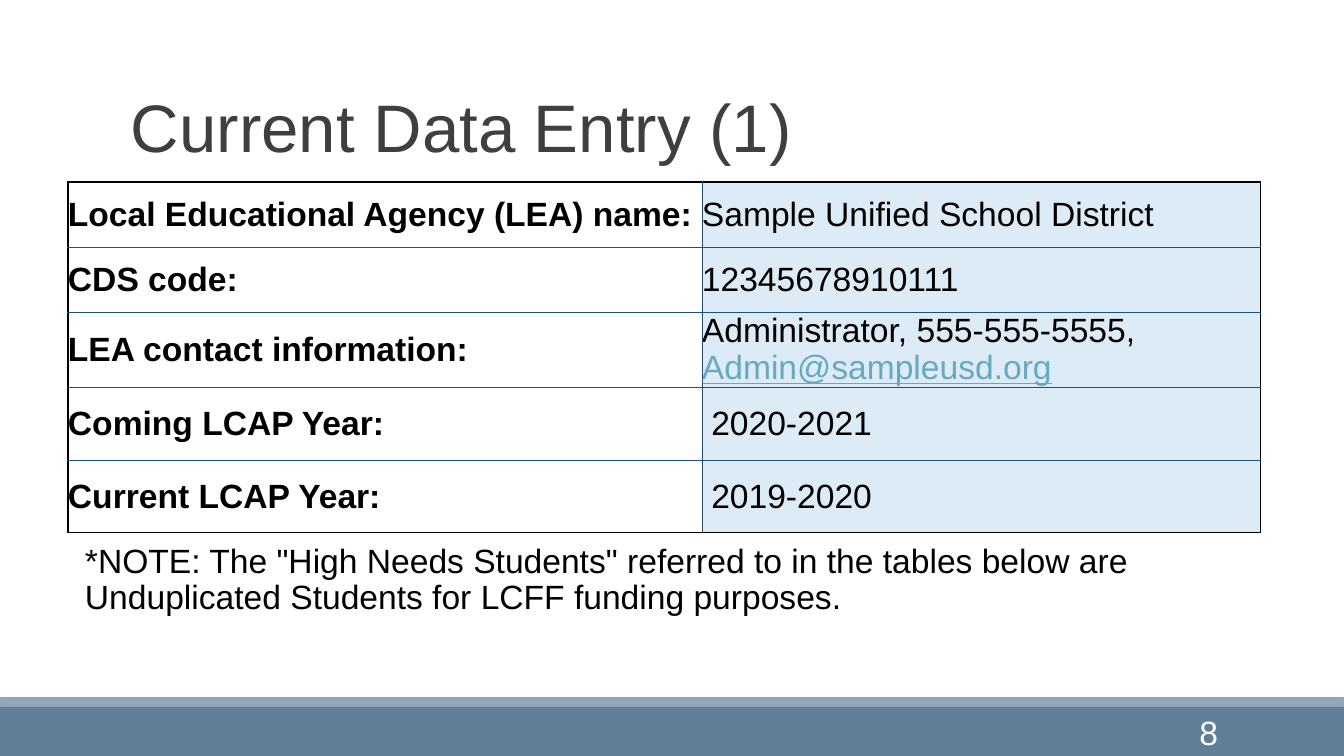
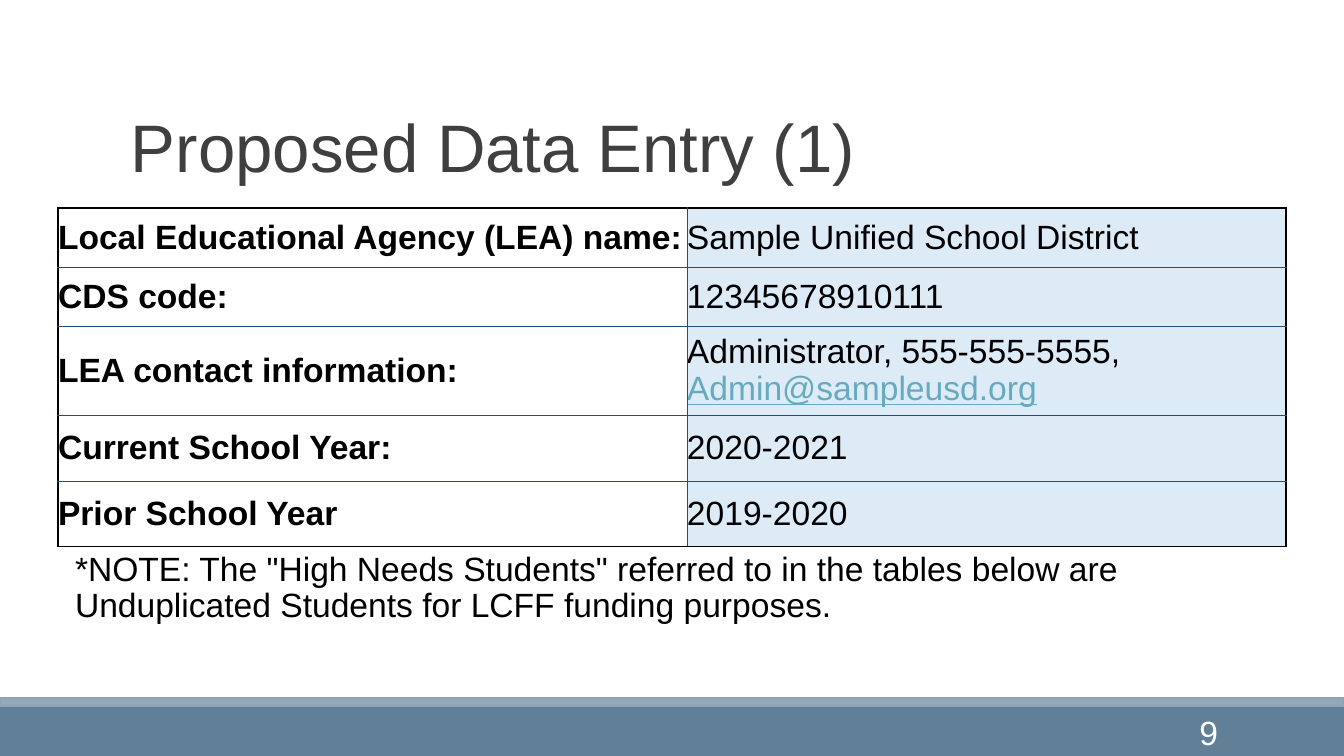
from lxml.etree import SubElement
from pptx import Presentation
from pptx.dml.color import RGBColor
from pptx.enum.shapes import MSO_SHAPE as Preset
from pptx.enum.text import MSO_ANCHOR as Anchor, MSO_AUTO_SIZE as AutoSize, PP_ALIGN as Align
from pptx.oxml.ns import qn
from pptx.util import Emu, Pt

SLIDE_WIDTH, SLIDE_HEIGHT = 1344, 756
FONT = "Arial"
BLACK, WHITE = "000000", "FFFFFF"
TITLE_GREY = "3F3F3F"
BAND, BAND_EDGE, BAND_LINE = "618097", "92A9B9", "8FA2B6"
ENTRY_FILL, GRID, LINK = "DDEBF7", "1F4E78", "67AABF"
TITLE_LEFT, TITLE_TOP, TITLE_WIDTH = 121, 31, 1109
NOTE_BOTTOM = 683
NOTE = ('*NOTE: The "High Needs Students" referred to in the tables below are '
        "Unduplicated Students for LCFF funding purposes.")
SHARED_ROWS = [
    ("Local Educational Agency (LEA) name:", ["Sample Unified School District"]),
    ("CDS code:", ["12345678910111"]),
    ("LEA contact information:", ["Administrator, 555-555-5555, ", "Admin@sampleusd.org"]),
]
ENTRY_SLIDES = [
    dict(title="Current Data Entry (1)", number="8", title_height=140,
         left=68, top=182, columns=[634, 559], heights=[65, 65, 75, 73, 73], note_top=539,
         years=[("Coming LCAP Year:", [" 2020-2021"]),
                ("Current LCAP Year:", [" 2019-2020"])]),
    dict(title="Proposed Data Entry (1)", number="9", title_height=160,
         left=58, top=208, columns=[629, 599], heights=[59, 59, 89, 66, 66], note_top=547,
         years=[("Current School Year:", ["2020-2021"]),
                ("Prior School Year", ["2019-2020"])]),
]


def px(length):
    return Emu(round(length * 914400 / 100.8))


def color(value):
    return RGBColor.from_string(value)


def place(shape, left, top, width, height):
    shape.left, shape.top = px(left), px(top)
    shape.width, shape.height = px(width), px(height)


def set_frame(frame, anchor, horizontal, vertical):
    frame.word_wrap = True
    frame.auto_size = AutoSize.NONE
    frame.vertical_anchor = anchor
    frame.margin_left = frame.margin_right = px(horizontal)
    frame.margin_top = frame.margin_bottom = px(vertical)


def add_run(paragraph, text, size=24, ink=BLACK, bold=False, underline=False):
    run = paragraph.add_run()
    run.text = text
    font = run.font
    font.name, font.size = FONT, Pt(size)
    font.bold, font.underline = bold, underline
    font.color.rgb = color(ink)


def add_bands(slide, layout):
    bands = [(707, 50, BAND, None), (698, 8, BAND_EDGE, BAND_LINE)]
    for position, (top, height, fill, line) in enumerate(bands, start=2):
        band = slide.shapes.add_shape(Preset.RECTANGLE, 0, px(top), px(SLIDE_WIDTH), px(height))
        band.shadow.inherit = False
        band.fill.solid()
        band.fill.fore_color.rgb = color(fill)
        if line:
            band.line.color.rgb = color(line)
            band.line.width = Pt(1.25)
        else:
            band.line.fill.background()
        layout.element.cSld.spTree.insert(position, band.element)


def add_title(slide, text, height):
    title = slide.shapes.title
    place(title, TITLE_LEFT, TITLE_TOP, TITLE_WIDTH, height)
    set_frame(title.text_frame, Anchor.BOTTOM, 10, 5)
    paragraph = title.text_frame.paragraphs[0]
    paragraph.alignment = Align.LEFT
    paragraph.line_spacing = 0.85
    add_run(paragraph, text, 48, TITLE_GREY)


def add_note(slide, left, top, width):
    note = slide.placeholders[1]
    place(note, left, top, width, NOTE_BOTTOM - top)
    set_frame(note.text_frame, Anchor.TOP, 5, 5)
    paragraph = note.text_frame.paragraphs[0]
    properties = paragraph._p.get_or_add_pPr()
    properties.set("marL", str(px(12)))
    properties.set("indent", "0")
    SubElement(properties, qn("a:buNone"))
    paragraph.line_spacing = 0.9
    paragraph.space_before = Pt(0)
    add_run(paragraph, NOTE)


def add_number(slide, text):
    box = slide.shapes.add_textbox(px(1084), px(712), px(144), px(40))
    set_frame(box.text_frame, Anchor.MIDDLE, 10, 5)
    paragraph = box.text_frame.paragraphs[0]
    paragraph.alignment = Align.RIGHT
    add_run(paragraph, text, ink=WHITE)


def add_borders(cell, outer_sides):
    properties = cell._tc.get_or_add_tcPr()
    for side in "LRTB":
        ink, width = (BLACK, Pt(1)) if side in outer_sides else (GRID, Pt(0.5))
        line = SubElement(properties, qn(f"a:ln{side}"), w=str(width))
        fill = SubElement(line, qn("a:solidFill"))
        SubElement(fill, qn("a:srgbClr"), val=ink)


def fill_cell(cell, texts, is_label, outer_sides):
    add_borders(cell, outer_sides)
    cell.fill.solid()
    cell.fill.fore_color.rgb = color(WHITE if is_label else ENTRY_FILL)
    cell.vertical_anchor = Anchor.MIDDLE
    cell.margin_left = cell.margin_right = cell.margin_top = cell.margin_bottom = 0
    for text in texts:
        is_link = "@" in text
        add_run(cell.text_frame.paragraphs[0], text, ink=LINK if is_link else BLACK,
                bold=is_label, underline=is_link)


def add_entry_table(slide, rows, left, top, columns, heights):
    table = slide.shapes.add_table(len(rows), len(columns), px(left), px(top),
                                   px(sum(columns)), px(sum(heights))).table
    table.first_row = table.horz_banding = False
    for column, width in zip(table.columns, columns):
        column.width = px(width)
    for index, (label, entry) in enumerate(rows):
        table.rows[index].height = px(heights[index])
        ends = ("T" if index == 0 else "") + ("B" if index == len(rows) - 1 else "")
        fill_cell(table.cell(index, 0), [label], True, "L" + ends)
        fill_cell(table.cell(index, 1), entry, False, "R" + ends)


def add_entry_slide(presentation, layout, title, number, title_height,
                    left, top, columns, heights, note_top, years):
    slide = presentation.slides.add_slide(layout)
    add_title(slide, title, title_height)
    add_entry_table(slide, SHARED_ROWS + years, left, top, columns, heights)
    add_note(slide, left, note_top, sum(columns))
    add_number(slide, number)
    return slide


def main():
    presentation = Presentation()
    presentation.slide_width, presentation.slide_height = px(SLIDE_WIDTH), px(SLIDE_HEIGHT)
    layout = presentation.slide_layouts[1]
    slides = [add_entry_slide(presentation, layout, **entry) for entry in ENTRY_SLIDES]
    add_bands(slides[0], layout)
    presentation.save("out.pptx")


if __name__ == "__main__":
    main()
